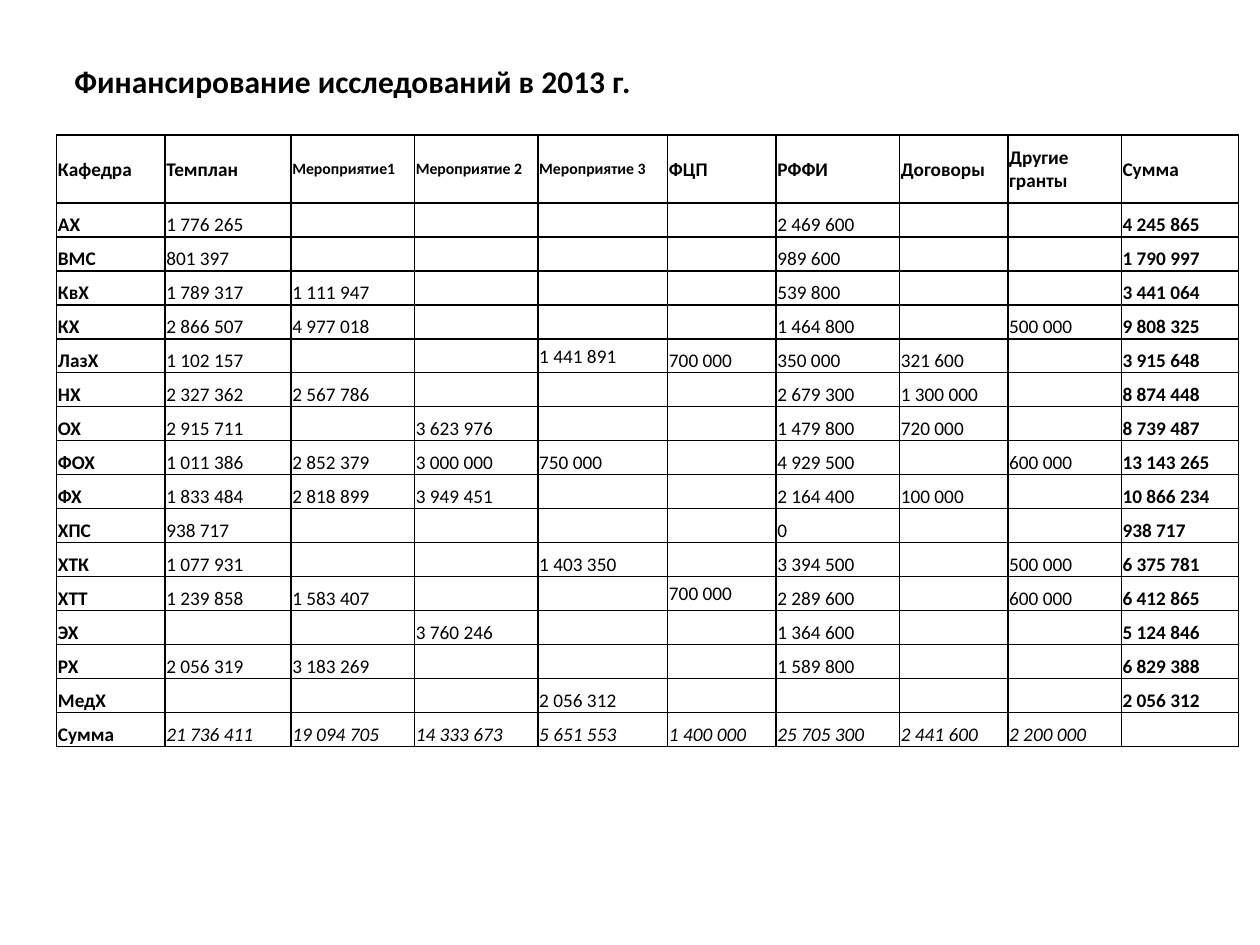
from dataclasses import dataclass
from typing import Optional

import lxml.etree
import pptx
import pptx.dml.color
import pptx.enum.text
import pptx.oxml.ns
import pptx.util
from pptx.util import Inches

ANCHOR = pptx.enum.text.MSO_ANCHOR


@dataclass(frozen=True)
class Theme:
    font: str = "Calibri"
    ink: str = "000000"
    title_size: int = 18
    body_size: int = 11
    small_size: int = 9
    border_width: int = 1


@dataclass(frozen=True)
class Column:
    heading: str
    width: float
    size: int


@dataclass(frozen=True)
class Department:
    name: str
    plan: Optional[int] = None
    event_1: Optional[int] = None
    event_2: Optional[int] = None
    event_3: Optional[int] = None
    federal: Optional[int] = None
    foundation: Optional[int] = None
    contracts: Optional[int] = None
    grants: Optional[int] = None

    def amounts(self) -> list[Optional[int]]:
        return [self.plan, self.event_1, self.event_2, self.event_3,
                self.federal, self.foundation, self.contracts, self.grants]


@dataclass(frozen=True)
class CellContent:
    text: str
    size: int = Theme.body_size
    bold: bool = False
    italic: bool = False
    anchor: ANCHOR = ANCHOR.BOTTOM


THEME = Theme()
HEADER_HEIGHT = 0.54
ROW_HEIGHT = 0.27

COLUMNS = [
    Column("Кафедра", 0.86, THEME.body_size),
    Column("Темплан", 1, THEME.body_size),
    Column("Мероприятие1", 0.98, THEME.small_size),
    Column("Мероприятие 2", 0.98, THEME.small_size),
    Column("Мероприятие 3", 1.03, THEME.small_size),
    Column("ФЦП", 0.86, THEME.body_size),
    Column("РФФИ", 0.98, THEME.body_size),
    Column("Договоры", 0.86, THEME.body_size),
    Column("Другие гранты", 0.9, THEME.body_size),
    Column("Сумма", 0.93, THEME.body_size),
]

DEPARTMENTS = [
    Department("АХ", plan=1776265, foundation=2469600),
    Department("ВМС", plan=801397, foundation=989600),
    Department("КвХ", plan=1789317, event_1=1111947, foundation=539800),
    Department("КХ", plan=2866507, event_1=4977018, foundation=1464800, grants=500000),
    Department("ЛазХ", plan=1102157, event_3=1441891, federal=700000,
               foundation=350000, contracts=321600),
    Department("НХ", plan=2327362, event_1=2567786, foundation=2679300, contracts=1300000),
    Department("ОХ", plan=2915711, event_2=3623976, foundation=1479800, contracts=720000),
    Department("ФОХ", plan=1011386, event_1=2852379, event_2=3000000, event_3=750000,
               foundation=4929500, grants=600000),
    Department("ФХ", plan=1833484, event_1=2818899, event_2=3949451,
               foundation=2164400, contracts=100000),
    Department("ХПС", plan=938717, foundation=0),
    Department("ХТК", plan=1077931, event_3=1403350, foundation=3394500, grants=500000),
    Department("ХТТ", plan=1239858, event_1=1583407, federal=700000,
               foundation=2289600, grants=600000),
    Department("ЭХ", event_2=3760246, foundation=1364600),
    Department("РХ", plan=2056319, event_1=3183269, foundation=1589800),
    Department("МедХ", event_3=2056312),
]

# Amounts centred vertically, by department and column heading
CENTRED = {("ЛазХ", "Мероприятие 3"), ("ХТТ", "ФЦП")}


def format_amount(amount: Optional[int]) -> str:
    return "" if amount is None else f"{amount:,}".replace(",", " ")


def total(amounts) -> int:
    return sum(amount or 0 for amount in amounts)


def header_row() -> list[CellContent]:
    return [CellContent(column.heading, column.size, bold=True, anchor=ANCHOR.MIDDLE)
            for column in COLUMNS]


def department_row(department: Department) -> list[CellContent]:
    row = [CellContent(department.name, bold=True)]
    for column, amount in zip(COLUMNS[1:], department.amounts()):
        centred = (department.name, column.heading) in CENTRED
        row.append(CellContent(format_amount(amount),
                               anchor=ANCHOR.MIDDLE if centred else ANCHOR.BOTTOM))
    row.append(CellContent(format_amount(total(department.amounts())), bold=True))
    return row


def totals_row() -> list[CellContent]:
    by_column = zip(*(department.amounts() for department in DEPARTMENTS))
    sums = [CellContent(format_amount(total(amounts)), italic=True) for amounts in by_column]
    return [CellContent("Сумма", bold=True), *sums, CellContent("")]


def add_run(paragraph, text: str, size: int, bold: bool, italic: bool = False) -> None:
    run = paragraph.add_run()
    run.text = text
    run.font.name = THEME.font
    run.font.size = pptx.util.Pt(size)
    run.font.bold = bold
    run.font.italic = italic
    run.font.color.rgb = pptx.dml.color.RGBColor.from_string(THEME.ink)


def set_borders(cell) -> None:
    """Put the four lines ahead of the fill, as the schema orders them."""
    qn = pptx.oxml.ns.qn
    properties = cell._tc.get_or_add_tcPr()
    for position, side in enumerate(("a:lnL", "a:lnR", "a:lnT", "a:lnB")):
        line = lxml.etree.Element(qn(side), w=str(pptx.util.Pt(THEME.border_width)))
        fill = lxml.etree.SubElement(line, qn("a:solidFill"))
        lxml.etree.SubElement(fill, qn("a:srgbClr"), val=THEME.ink)
        properties.insert(position, line)


def fill_cell(cell, content: CellContent) -> None:
    cell.margin_left = cell.margin_right = cell.margin_top = Inches(0.01)
    cell.margin_bottom = 0
    cell.vertical_anchor = content.anchor
    cell.fill.background()
    set_borders(cell)
    paragraph = cell.text_frame.paragraphs[0]
    if content.text:
        add_run(paragraph, content.text, content.size, content.bold, content.italic)
    else:
        # Keeps an empty cell from stretching its row
        lxml.etree.SubElement(paragraph._p, pptx.oxml.ns.qn("a:endParaRPr"),
                              sz=str(content.size * 100))


def add_funding_table(slide) -> None:
    rows = [header_row(), *map(department_row, DEPARTMENTS), totals_row()]
    width = sum(column.width for column in COLUMNS)
    height = HEADER_HEIGHT + ROW_HEIGHT * (len(rows) - 1)
    table = slide.shapes.add_table(len(rows), len(COLUMNS), Inches(0.45), Inches(1.07),
                                   Inches(width), Inches(height)).table
    table.first_row = table.horz_banding = False
    for table_column, column in zip(table.columns, COLUMNS):
        table_column.width = Inches(column.width)
    for row_index, row in enumerate(rows):
        table.rows[row_index].height = Inches(ROW_HEIGHT if row_index else HEADER_HEIGHT)
        for column_index, content in enumerate(row):
            fill_cell(table.cell(row_index, column_index), content)


def add_title(slide, text: str) -> None:
    title = slide.shapes.title
    title.left, title.top = Inches(0.47), Inches(0.44)
    title.width, title.height = Inches(4.66), Inches(0.4)
    frame = title.text_frame
    frame.word_wrap = False
    frame.auto_size = pptx.enum.text.MSO_AUTO_SIZE.SHAPE_TO_FIT_TEXT
    frame.vertical_anchor = ANCHOR.TOP
    paragraph = frame.paragraphs[0]
    paragraph.alignment = pptx.enum.text.PP_ALIGN.CENTER
    add_run(paragraph, text, THEME.title_size, bold=True)


def main() -> None:
    presentation = pptx.Presentation()
    presentation.slide_width, presentation.slide_height = Inches(10), Inches(7.5)
    slide = presentation.slides.add_slide(presentation.slide_layouts[5])
    add_title(slide, "Финансирование исследований в 2013 г.")
    add_funding_table(slide)
    presentation.save("out.pptx")


if __name__ == "__main__":
    main()
